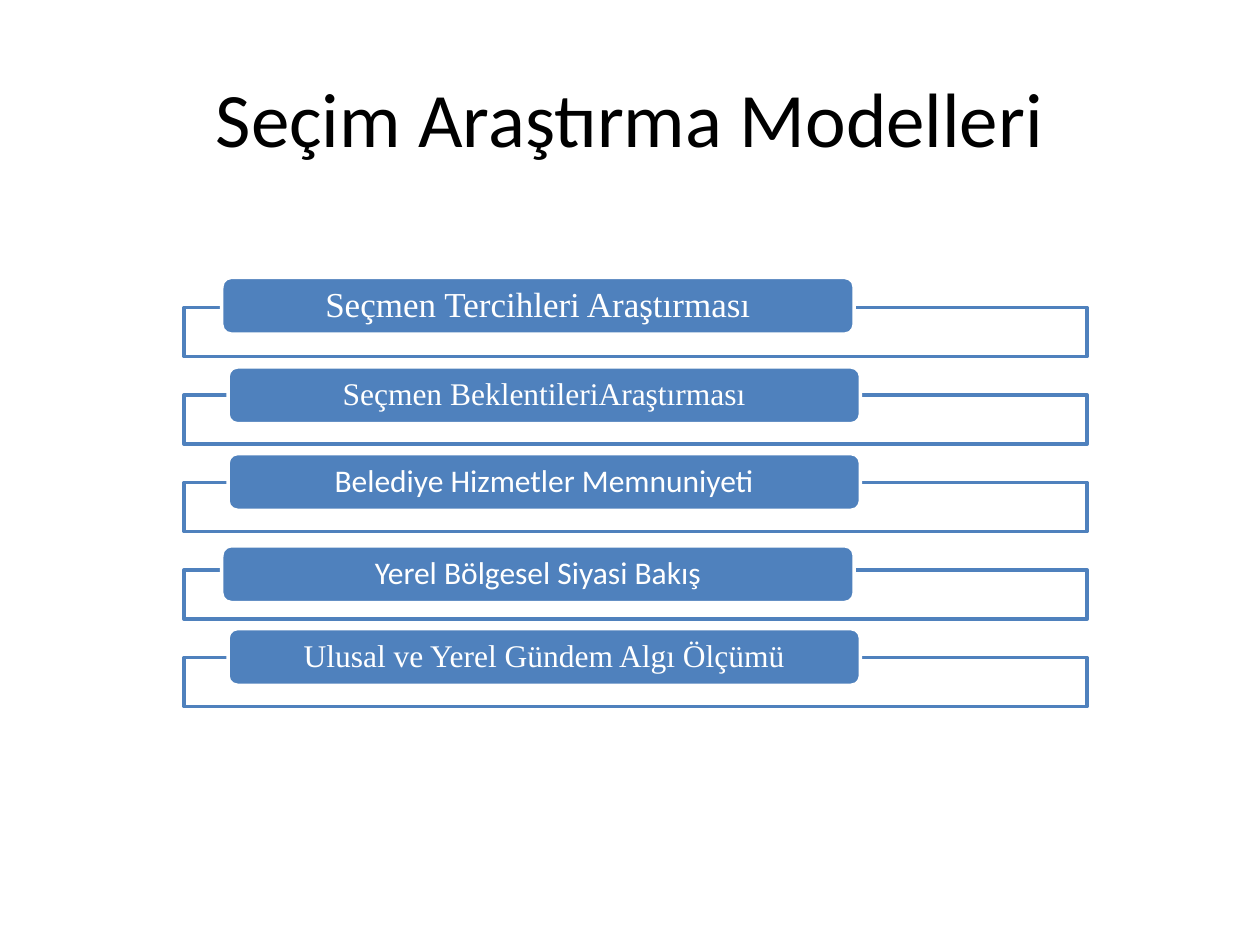
"""Build the slide listing election research models as labelled frames."""
from lxml.etree import SubElement
from pptx import Presentation
from pptx.dml.color import RGBColor
from pptx.enum.shapes import MSO_SHAPE
from pptx.enum.text import MSO_ANCHOR, PP_ALIGN
from pptx.oxml.ns import qn
from pptx.util import Pt

TITLE = "Seçim Araştırma Modelleri"
MODELS = [
    {"label": "Seçmen Tercihleri Araştırması", "face": "serif", "size": "lead", "shift": (-3.6, -0.7)},
    {"label": "Seçmen BeklentileriAraştırması", "face": "serif", "size": "label", "shift": (0, 0.5)},
    {"label": "Belediye Hizmetler Memnuniyeti", "face": "sans", "size": "label", "shift": (0, 0)},
    {"label": "Yerel Bölgesel Siyasi Bakış", "face": "sans", "size": "label", "shift": (-3.6, 2.7)},
    {"label": "Ulusal ve Yerel Gündem Algı Ölçümü", "face": "serif", "size": "label", "shift": (0, 0)},
]
THEME = {
    "black": RGBColor(0x00, 0x00, 0x00),
    "white": RGBColor(0xFF, 0xFF, 0xFF),
    "blue": RGBColor(0x4F, 0x81, 0xBD),
    "sans": "Calibri",
    "serif": "Times New Roman",
    "title": Pt(44),
    "lead": Pt(20),
    "label": Pt(18),
    "outline": Pt(2),
    "frame_alpha": "90000",
}
SLIDE_SIZE = (720, 540)
TITLE_BOX = (36, 21.6, 648, 90)
FRAME_LEFT, FRAME_TOP, FRAME_WIDTH, FRAME_HEIGHT = 105.1, 175.7, 516.2, 28.1
PITCH = 50
PILL_LEFT, PILL_RISE, PILL_WIDTH, PILL_HEIGHT = 130.3, 16.5, 361.4, 32.4
PILL_FORMAT = {
    "margin_left": Pt(15.3),
    "margin_right": Pt(15.3),
    "margin_top": Pt(1.6),
    "margin_bottom": Pt(1.6),
}


def apply(target, values):
    for name, value in values.items():
        setattr(target, name, value)


def write(holder, words, face, size, colour, frame_format, line_spacing):
    frame = holder.text_frame
    apply(frame, {"word_wrap": True, "vertical_anchor": MSO_ANCHOR.MIDDLE, **frame_format})
    paragraph = frame.paragraphs[0]
    apply(paragraph, {"text": words, "alignment": PP_ALIGN.CENTER, "line_spacing": line_spacing})
    font = paragraph.runs[0].font
    apply(font, {"name": THEME[face], "size": THEME[size]})
    font.color.rgb = THEME[colour]


def add_block(slide, preset, box, fill, outline):
    block = slide.shapes.add_shape(preset, *map(Pt, box))
    block.shadow.inherit = False
    block.fill.solid()
    block.fill.fore_color.rgb = THEME[fill]
    block.line.color.rgb = THEME[outline]
    block.line.width = THEME["outline"]
    return block


def add_model(slide, row, model):
    top = FRAME_TOP + row * PITCH
    frame = add_block(slide, MSO_SHAPE.RECTANGLE,
                      (FRAME_LEFT, top, FRAME_WIDTH, FRAME_HEIGHT), "white", "blue")
    fill_colour = frame.fill._xPr.find(qn("a:solidFill"))[0]
    SubElement(fill_colour, qn("a:alpha"), val=THEME["frame_alpha"])

    across, down = model["shift"]
    pill = add_block(slide, MSO_SHAPE.ROUNDED_RECTANGLE,
                     (PILL_LEFT + across, top - PILL_RISE + down, PILL_WIDTH, PILL_HEIGHT),
                     "blue", "white")
    write(pill, model["label"], model["face"], model["size"], "white", PILL_FORMAT, 0.9)


def main():
    deck = Presentation()
    deck.slide_width, deck.slide_height = map(Pt, SLIDE_SIZE)
    slide = deck.slides.add_slide(deck.slide_layouts[6])
    heading = slide.shapes.add_textbox(*map(Pt, TITLE_BOX))
    write(heading, TITLE, "sans", "title", "black", {}, 1.0)
    for row, model in enumerate(MODELS):
        add_model(slide, row, model)
    deck.save("out.pptx")


if __name__ == "__main__":
    main()
